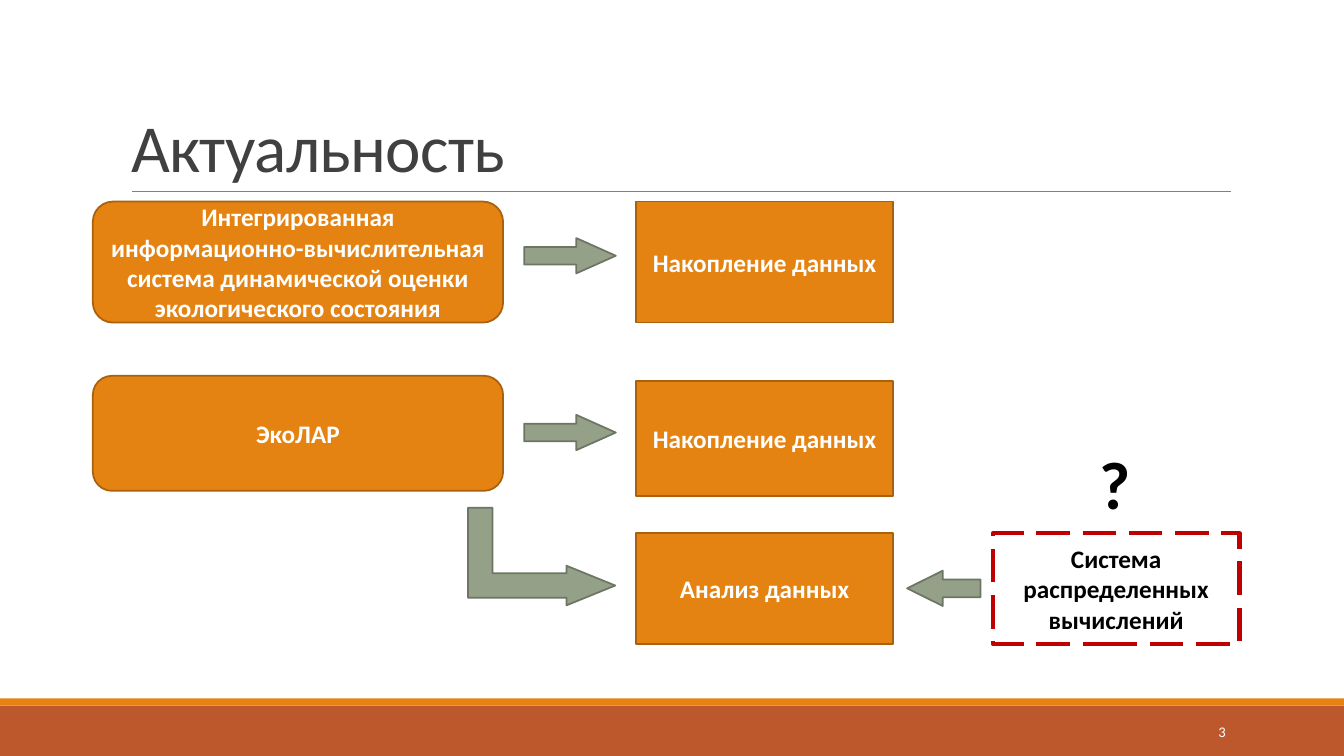
import pptx
import pptx.util
import pptx.dml.color
import pptx.enum.dml
import pptx.enum.shapes
import pptx.enum.text
import pptx.oxml.ns
import lxml.etree

Cm, Pt = pptx.util.Cm, pptx.util.Pt
KIND = pptx.enum.shapes.MSO_SHAPE
ALIGN = pptx.enum.text.PP_ALIGN
ANCHOR = pptx.enum.text.MSO_ANCHOR
FIT = pptx.enum.text.MSO_AUTO_SIZE
WIDE, HIGH = 33.87, 19.05
ORANGE, RUST = "E48312", "BD582C"


def tint(code):
    return pptx.dml.color.RGBColor.from_string(code)


def cms(box):
    return [Cm(size) for size in box]


def write(shape, text, size, color, bold=False, align=ALIGN.CENTER, anchor=ANCHOR.MIDDLE):
    frame = shape.text_frame
    frame.word_wrap = True
    frame.vertical_anchor = anchor
    frame.text = text
    para = frame.paragraphs[0]
    para.alignment = align
    font = para.font
    font.name, font.size, font.bold = "Calibri", Pt(size), bold
    font.color.rgb = tint(color)
    return para


def draw(slide, kind, box, fill, line=None, width=1.25):
    shape = slide.shapes.add_shape(kind, *cms(box))
    shape.shadow.inherit = False
    shape.fill.solid()
    shape.fill.fore_color.rgb = tint(fill)
    if line:
        shape.line.color.rgb = tint(line)
        shape.line.width = Pt(width)
    else:
        shape.line.fill.background()
    return shape


def block(slide, kind, box, text):
    shape = draw(slide, kind, box, ORANGE, "A9610D")
    write(shape, text, 18, "FFFFFF", True)


def arrow(slide, kind, box, ratios, turn=0):
    shape = draw(slide, kind, box, "94A088", "6D7665")
    for spot, ratio in enumerate(ratios):
        shape.adjustments[spot] = ratio
    shape.rotation = turn


def header(slide, box):
    left, top, wide, high = box
    # Title
    title = slide.shapes.title
    title.left, title.top, title.width, title.height = cms(box)
    para = write(title, "Актуальность", 48, "404040", align=ALIGN.LEFT, anchor=ANCHOR.BOTTOM)
    title.text_frame.auto_size = FIT.NONE
    para.line_spacing = 0.85
    para.runs[0].font._element.set("spc", "-50")
    # Rule under the title
    base = top + high
    rule = slide.shapes.add_connector(
        pptx.enum.shapes.MSO_CONNECTOR.STRAIGHT,
        *cms([left + 0.28, base, left + wide + 0.02, base]))
    rule.line.color.rgb = tint("808080")
    rule.line.width = Pt(0.5)
    lxml.etree.SubElement(rule._element.spPr, pptx.oxml.ns.qn("a:effectLst"))


def footer(slide, box, number):
    left, top, wide, high = box
    draw(slide, KIND.RECTANGLE, [left, top + 0.18, wide, high - 0.18], RUST)
    draw(slide, KIND.RECTANGLE, [left, top, wide, 0.18], ORANGE)
    # Slide number
    label = slide.shapes.add_textbox(*cms([left + 27.51, top + 0.33, 3.63, 1.02]))
    write(label, number, 10.5, "FFFFFF", align=ALIGN.RIGHT)


def row(slide, box, drop, name, goal):
    """A system on the left, an arrow, and its task set lower by drop."""
    left, top, wide, high = box
    block(slide, KIND.ROUNDED_RECTANGLE, [left, top, 10.34, high], name)
    arrow(slide, KIND.RIGHT_ARROW, [left + 10.87, top + 0.92 + drop / 2, 2.31, 0.89], [0.5, 1.12])
    block(slide, KIND.RECTANGLE, [left + wide - 6.48, top + drop, 6.48, high], goal)


def study(slide, box):
    """Data analysis, fed from both sides."""
    left, top, wide, high = box
    # Bent arrow from the system above
    arrow(slide, KIND.BENT_UP_ARROW, [left - 3.61, top - 1.27, 2.46, 3.71], [0.25, 0.203, 0.5], 90)
    block(slide, KIND.RECTANGLE, [left, top, 6.48, high], "Анализ данных")
    # Proposed system in a dashed frame
    plan = draw(slide, KIND.RECTANGLE, [left + wide - 6.22, top, 6.22, high], "FFFFFF", "C00000", 3)
    plan.line.dash_style = pptx.enum.dml.MSO_LINE.LONG_DASH
    write(plan, "Система распределенных вычислений", 18, "000000", True)
    arrow(slide, KIND.RIGHT_ARROW, [left + 6.83, top + 0.94, 1.85, 0.89], [0.5, 1.01], 180)
    # Question mark above it
    mark = slide.shapes.add_textbox(*cms([left + wide - 3.78, top - 2.42, 1.32, 2.31]))
    write(mark, "?", 48, "000000", True, ALIGN.LEFT, ANCHOR.TOP)


def main():
    deck = pptx.Presentation()
    deck.slide_width, deck.slide_height = cms([WIDE, HIGH])
    slide = deck.slides.add_slide(deck.slide_layouts[5])
    footer(slide, [0, 17.6, WIDE, HIGH - 17.6], "3")
    header(slide, [3.05, 0.79, 27.94, 4.04])
    row(slide, [2.34, 5.08, 20.17, 3.05], 0,
        "Интегрированная информационно-вычислительная система "
        "динамической оценки экологического состояния", "Накопление данных")
    row(slide, [2.34, 9.47, 20.17, 2.9], 0.13, "ЭкоЛАР", "Накопление данных")
    study(slide, [16.03, 13.44, 15.21, 2.79])
    deck.save("out.pptx")


if __name__ == "__main__":
    main()
